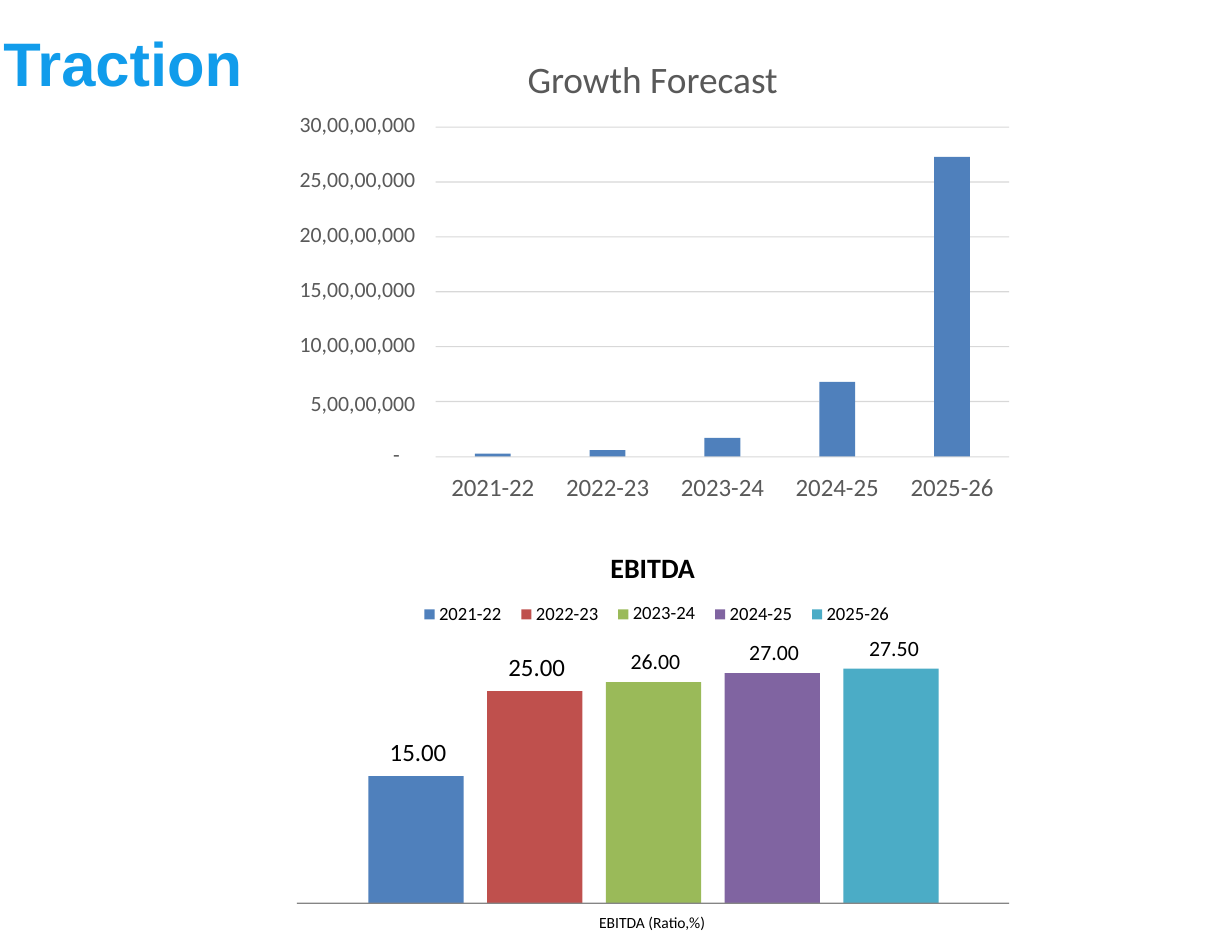
"""Build the Traction slide with its growth forecast and EBITDA columns."""
from dataclasses import dataclass

from pptx import Presentation
from pptx.dml.color import RGBColor
from pptx.enum.shapes import MSO_SHAPE as Preset
from pptx.enum.text import MSO_ANCHOR as Anchor
from pptx.enum.text import MSO_AUTO_SIZE as AutoSize
from pptx.enum.text import PP_ALIGN as Align
from pptx.util import Inches, Pt


@dataclass(frozen=True)
class Theme:
    heading_font: str = "Arial"
    body_font: str = "Calibri"
    heading: str = "119CEB"
    grey: str = "595959"
    black: str = "000000"
    grid: str = "D8D8D8"
    axis: str = "858585"
    bars: tuple = ("4F80BC", "BF504D", "9ABA59", "8064A1", "4BACC6")
    heading_size: float = 39.5
    title: int = 24
    subtitle: int = 18
    large: int = 16
    medium: int = 14
    legend: int = 12
    small: int = 10


theme = Theme()


def write_text(frame, text, *, size, color=theme.black, font=theme.body_font,
               bold=False, align=Align.LEFT, indent=0.01, before=0,
               spacing=None, inset=0.01):
    first = not frame.text
    para = frame.paragraphs[0] if first else frame.add_paragraph()
    if first:
        frame.word_wrap = True
        frame.margin_left = frame.margin_right = frame.margin_bottom = 0
        frame.margin_top = Inches(inset)
    else:
        para.space_before = Pt(before)
    settings = para._p.get_or_add_pPr()
    settings.set("marL", str(Inches(indent)))
    settings.set("indent", "0")
    para.alignment = align
    if spacing:
        para.line_spacing = spacing
    span = para.add_run()
    span.text = text
    span.font.name = font
    span.font.size = Pt(size)
    span.font.bold = bold
    span.font.color.rgb = RGBColor.from_string(color)


def add_block(left, top, width, height, color):
    block = page.shapes.add_shape(Preset.RECTANGLE, Inches(left), Inches(top),
                                  Inches(width), Inches(height))
    block.shadow.inherit = False
    block.fill.solid()
    block.fill.fore_color.rgb = RGBColor.from_string(color)
    block.line.fill.background()


deck = Presentation()
deck.slide_width, deck.slide_height = Inches(11), Inches(8.5)
page = deck.slides.add_slide(deck.slide_layouts[5])

years = ["2021-22", "2022-23", "2023-24", "2024-25", "2025-26"]
plot_left, plot_right = 3.89, 9.01

growth_base, growth_width, growth_step = 4.08, 0.32, 1.025
growth_bars = [(4.24 + growth_step * index, top)
               for index, top in enumerate((4.05, 4.02, 3.91, 3.41, 1.4))]

for row in range(6):
    line_top = 3.58 - 0.49 * row
    start = plot_left
    for left, top in growth_bars:
        if top < line_top:
            add_block(start, line_top, left - start, 0.01, theme.grid)
            start = left + growth_width
    add_block(start, line_top, plot_right - start, 0.01, theme.grid)

for left, top in growth_bars:
    add_block(left, top, growth_width, growth_base - top, theme.bars[0])
add_block(plot_left, 4.075, plot_right - plot_left, 0.01, theme.grid)

row_heights = [0.72, 0.45, 0.49, 0.49, 0.49, 0.49, 0.34]
table = page.shapes.add_table(7, 2, Inches(0), Inches(0.21),
                              Inches(3.71), Inches(3.47)).table
table.first_row = table.horz_banding = False
for column, width in zip(table.columns, (2.42, 1.29)):
    column.width = Inches(width)
for row, height in zip(table.rows, row_heights):
    row.height = Inches(height)
for cell in table.iter_cells():
    cell.fill.background()
    cell.vertical_anchor = Anchor.TOP
    cell.margin_left = cell.margin_right = 0
    cell.margin_top = cell.margin_bottom = 0

write_text(table.cell(0, 0).text_frame, "Traction", size=theme.heading_size,
           color=theme.heading, font=theme.heading_font, bold=True,
           indent=0.03, spacing=1.11, inset=0)
amounts = ["30,00,00,000", "25,00,00,000", "20,00,00,000",
           "15,00,00,000", "10,00,00,000", "5,00,00,000"]
for row, amount in enumerate(amounts, start=1):
    cell = table.cell(row, 1)
    write_text(cell.text_frame, amount, size=theme.medium, color=theme.grey,
               align=Align.RIGHT, indent=0, inset=0,
               spacing=1.18 if row == len(amounts) else None)
    cell.margin_top = Inches(0.06 if row == 1 else 0.1)

ebitda_base, ebitda_width, ebitda_step = 8.07, 0.85, 1.06
for index, top in enumerate((6.93, 6.17, 6.09, 6.01, 5.97)):
    add_block(3.29 + ebitda_step * index, top, ebitda_width,
              ebitda_base - top, theme.bars[index])
add_block(2.65, 8.06, 6.36, 0.01, theme.axis)

legend_step = 0.865
for index, color in enumerate(theme.bars):
    add_block(3.79 + legend_step * index, 5.44, 0.09, 0.09, color)

labels = [("-", 3.5, 3.93, 0.09, 0.26, theme.medium, theme.grey)]
labels += [(year, 4.02 + growth_step * index, 4.2, 0.77, 0.29,
            theme.large, theme.grey) for index, year in enumerate(years)]
labels += [
    ("15.00", 3.47, 6.57, 0.53, 0.29, theme.large, theme.black),
    ("25.00", 4.53, 5.81, 0.53, 0.29, theme.large, theme.black),
    ("26.00", 5.62, 5.77, 0.47, 0.26, theme.medium, theme.black),
    ("27.00", 6.68, 5.69, 0.47, 0.26, theme.medium, theme.black),
    ("EBITDA (Ratio,%)", 5.34, 8.14, 0.98, 0.19, theme.small, theme.black),
]
labels += [(years[index], 3.91 + legend_step * index, 5.36, 0.59, 0.23,
            theme.legend, theme.black) for index in (0, 1, 3)]
for text, left, top, width, height, size, color in labels:
    box = page.shapes.add_textbox(Inches(left), Inches(top),
                                  Inches(width), Inches(height))
    write_text(box.text_frame, text, size=size, color=color)
    box.text_frame.auto_size = AutoSize.SHAPE_TO_FIT_TEXT

last = page.shapes.add_textbox(Inches(7.37), Inches(5.27),
                               Inches(0.85), Inches(0.64)).text_frame
write_text(last, years[4], size=theme.legend, inset=0.1)
write_text(last, "27.50", size=theme.medium, indent=0.39, before=6.8)
last.auto_size = AutoSize.SHAPE_TO_FIT_TEXT

subtitle = page.shapes.add_textbox(Inches(5.44), Inches(4.91),
                                   Inches(0.78), Inches(0.67)).text_frame
write_text(subtitle, "EBITDA", size=theme.subtitle, bold=True)
write_text(subtitle, years[2], size=theme.legend, indent=0.21, before=10.3)
subtitle.auto_size = AutoSize.SHAPE_TO_FIT_TEXT

title = page.shapes.title
title.left, title.top = Inches(4.7), Inches(0.49)
title.width, title.height = Inches(2.26), Inches(0.43)
write_text(title.text_frame, "Growth Forecast", size=theme.title,
           color=theme.grey)
title.text_frame.vertical_anchor = Anchor.TOP
title.text_frame.auto_size = AutoSize.SHAPE_TO_FIT_TEXT

deck.save("out.pptx")
